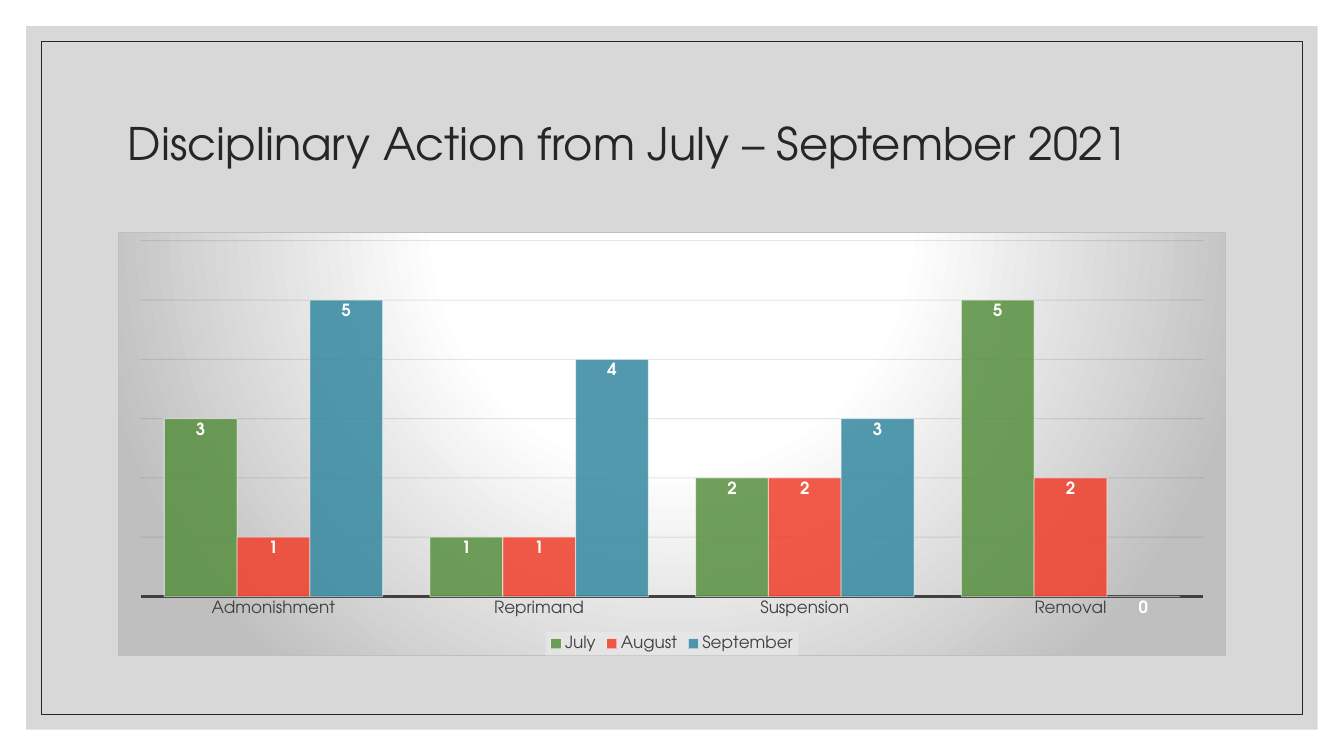
from lxml.etree import SubElement
from pptx import Presentation
from pptx.chart.data import CategoryChartData
from pptx.dml.color import RGBColor
from pptx.enum.chart import XL_CHART_TYPE, XL_LABEL_POSITION, XL_LEGEND_POSITION, XL_TICK_MARK
from pptx.enum.shapes import MSO_SHAPE
from pptx.enum.text import MSO_ANCHOR
from pptx.oxml import parse_xml
from pptx.oxml.ns import nsdecls, qn
from pptx.util import Inches, Pt

TITLE = "Disciplinary Action from July – September 2021"
ACTIONS = ["Admonishment", "Reprimand", "Suspension", "Removal"]
GREEN = RGBColor(0x57, 0x90, 0x3F)
RED = RGBColor(0xF0, 0x3F, 0x2B)
BLUE = RGBColor(0x34, 0x88, 0xA0)
WHITE = RGBColor(0xFF, 0xFF, 0xFF)
SILVER = RGBColor(0xBF, 0xBF, 0xBF)
INK = RGBColor(0x26, 0x26, 0x26)
GREY = RGBColor(0x40, 0x40, 0x40)
BLACK = RGBColor(0x0D, 0x0D, 0x0D)
MONTHS = [
    ("July", (3, 1, 2, 5), GREEN),
    ("August", (1, 1, 2, 2), RED),
    ("September", (5, 4, 3, 0), BLUE),
]
FACE = "TeX Gyre Adventor"
TITLE_FONT = {"name": FACE, "size": Pt(32)}
CHART_FONT = {"name": FACE, "size": Pt(10)}
AXIS_FONT = {"name": FACE, "size": Pt(12)}
LABEL_FONT = {"name": FACE, "size": Pt(12), "bold": True}
WIDTH, HEIGHT = 13.33, 7.5
MARGIN = 1.17
TITLE_TOP, TITLE_HEIGHT = 0.7, 1.5
CHART_TOP, CHART_HEIGHT = 2.3, 4.21
STOPS = [(0, WHITE), (39, WHITE), (100, SILVER)]


def set_font(font, values, color):
    for name, value in values.items():
        setattr(font, name, value)
    font.color.rgb = color


def set_line(line, color, width):
    line.color.rgb = color
    line.width = Pt(width)


def fade(element, *shares):
    for color, share in zip(element.iter(qn("a:srgbClr")), shares):
        SubElement(color, qn("a:alpha"), val=str(share * 1000))


def add_frame(s, inset):
    box = (inset, inset, WIDTH - 2 * inset, HEIGHT - 2 * inset)
    sp = s.shapes.add_shape(MSO_SHAPE.RECTANGLE, *map(Inches, box))
    sp.shadow.inherit = False
    return sp


def add_backdrop(s):
    panel = add_frame(s, 0.26)
    panel.fill.solid()
    panel.fill.fore_color.rgb = SILVER
    panel.line.fill.background()
    fade(panel._element, 60)
    border = add_frame(s, 0.41)
    border.fill.background()
    set_line(border.line, INK, 0.5)


def add_title(s):
    box = (MARGIN, TITLE_TOP, WIDTH - 2 * MARGIN, TITLE_HEIGHT)
    tf = s.shapes.add_textbox(*map(Inches, box)).text_frame
    tf.word_wrap = True
    tf.vertical_anchor = MSO_ANCHOR.MIDDLE
    p = tf.paragraphs[0]
    p.line_spacing = 0.9
    r = p.add_run()
    r.text = TITLE
    set_font(r.font, TITLE_FONT, INK)


def style_axes(chart):
    cat, val = chart.category_axis, chart.value_axis
    cat.major_tick_mark = cat.minor_tick_mark = XL_TICK_MARK.NONE
    set_font(cat.tick_labels.font, AXIS_FONT, GREY)
    set_line(cat.format.line, GREY, 1.5)
    val.visible = False
    val.minimum_scale, val.maximum_scale, val.major_unit = 0, 6, 1
    set_line(val.major_gridlines.format.line, BLACK, 0.75)
    fade(val._element, 10)


def style_series(plot):
    plot.gap_width, plot.overlap = 65, 0
    plot.vary_by_categories = False
    for ser, (_, _, color) in zip(plot.series, MONTHS):
        ser.format.fill.solid()
        ser.format.fill.fore_color.rgb = color
        set_line(ser.format.line, WHITE, 0.75)
        fade(ser._element, 85, 50)
        labels = ser.data_labels
        labels.show_value = True
        labels.position = XL_LABEL_POSITION.INSIDE_END
        set_font(labels.font, LABEL_FONT, WHITE)


def style_legend(chart):
    chart.has_legend = True
    legend = chart.legend
    legend.position = XL_LEGEND_POSITION.BOTTOM
    legend.include_in_layout = False
    set_font(legend.font, AXIS_FONT, GREY)
    fill = parse_xml(
        f'<c:spPr {nsdecls("c", "a")}><a:solidFill><a:srgbClr val="F2F2F2">'
        '<a:alpha val="39000"/></a:srgbClr></a:solidFill></c:spPr>')
    legend._element.find(qn("c:txPr")).addprevious(fill)


def style_area(chart):
    stops = "".join(
        f'<a:gs pos="{at * 1000}"><a:srgbClr val="{color}"/></a:gs>' for at, color in STOPS)
    area = parse_xml(
        f'<c:spPr {nsdecls("c", "a")}><a:gradFill><a:gsLst>{stops}</a:gsLst>'
        '<a:path path="circle"><a:fillToRect l="50000" t="-80000" r="50000" b="180000"/>'
        f'</a:path></a:gradFill><a:ln w="{Pt(0.75)}"><a:solidFill>'
        f'<a:srgbClr val="{SILVER}"/></a:solidFill></a:ln></c:spPr>')
    chart._chartSpace.find(qn("c:chart")).addnext(area)


def add_action_chart(s):
    data = CategoryChartData()
    data.categories = ACTIONS
    for name, values, _ in MONTHS:
        data.add_series(name, values)
    box = (MARGIN, CHART_TOP, WIDTH - 2 * MARGIN, CHART_HEIGHT)
    chart = s.shapes.add_chart(
        XL_CHART_TYPE.COLUMN_CLUSTERED, *map(Inches, box), data).chart
    chart.has_title = False
    set_font(chart.font, CHART_FONT, BLACK)
    style_axes(chart)
    style_series(chart.plots[0])
    style_legend(chart)
    style_area(chart)


def main():
    """Build the disciplinary action slide."""
    prs = Presentation()
    prs.slide_width, prs.slide_height = Inches(WIDTH), Inches(HEIGHT)
    s = prs.slides.add_slide(prs.slide_layouts[6])
    add_backdrop(s)
    add_title(s)
    add_action_chart(s)
    prs.save("out.pptx")


if __name__ == "__main__":
    main()
